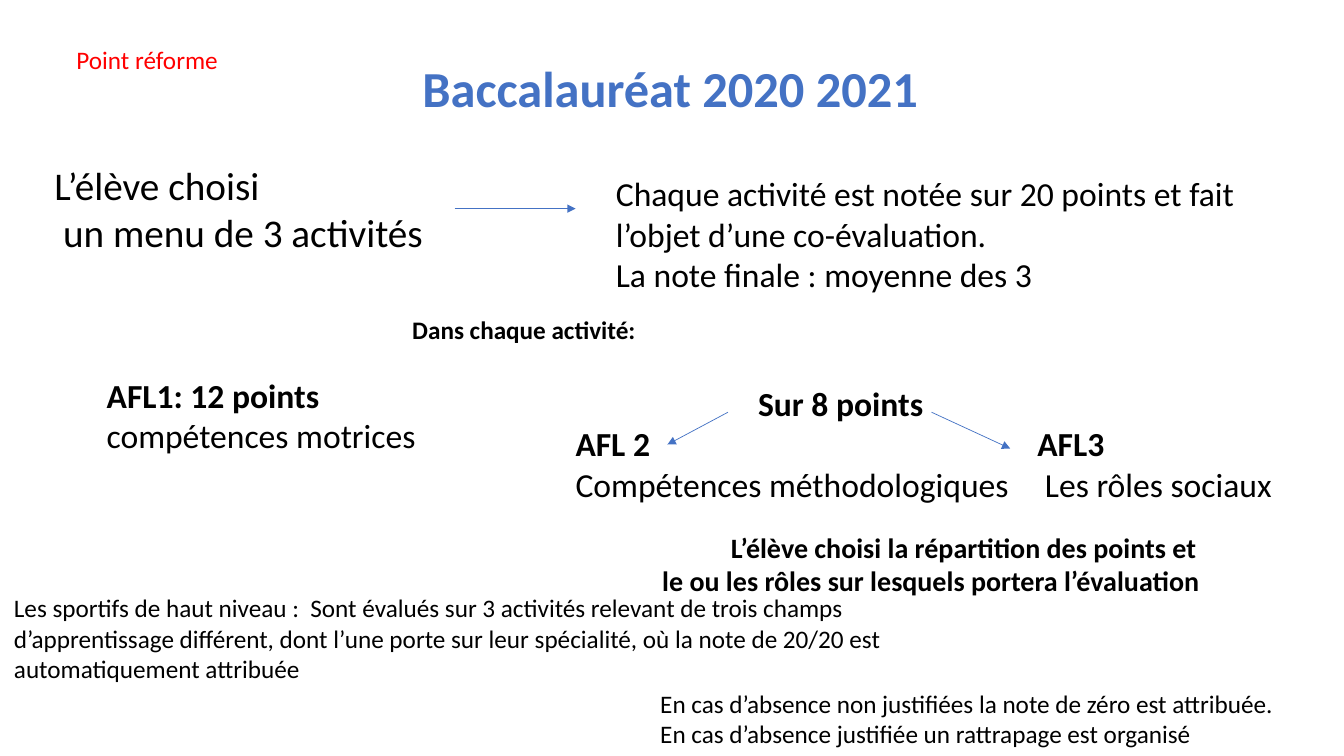
from pptx import Presentation
from pptx.dml.color import RGBColor
from pptx.enum.shapes import MSO_CONNECTOR
from pptx.enum.text import MSO_ANCHOR, MSO_AUTO_SIZE, PP_ALIGN
from pptx.oxml.ns import qn
from pptx.util import Inches, Pt
from lxml.etree import SubElement

BLUE = RGBColor(0x44, 0x72, 0xC4)
BLACK = RGBColor(0, 0, 0)
RED = RGBColor(0xFF, 0, 0)
FONT = "Calibri"

TITLE = ((4.09, 0.52, 5.15, 0.71), 36, BLUE, [("Baccalauréat 2020 2021", True)])
NOTES = [
    ((0.44, 1.55, 4.58, 1.04), 28, BLACK,
     [("L’élève choisi", False), (" un menu de 3 activités", False)]),
    ((6.01, 1.67, 6.46, 1.31), 24, BLACK,
     [("Chaque activité est notée sur 20 points et fait l’objet d’une co-évaluation.", False),
      ("La note finale : moyenne des 3", False)]),
    ((3.99, 3.07, 3.44, 0.4), 18, BLACK, [("Dans chaque activité:", True)]),
    ((0.96, 3.67, 3.56, 0.91), 24, BLACK,
     [("AFL1: 12 points", True), ("compétences motrices", False)]),
    ((7.42, 3.75, 1.9, 0.5), 24, BLACK, [("Sur 8 points", True)]),
    ((5.61, 4.15, 4.6, 0.91), 24, BLACK,
     [("AFL 2", True), ("Compétences méthodologiques", False)]),
    ((10.19, 4.15, 2.68, 0.91), 24, BLACK,
     [("AFL3", True), (" Les rôles sociaux", False)]),
    ((0.04, 5.83, 9.53, 1.01), 18, BLACK,
     [("Les sportifs de haut niveau :  Sont évalués sur 3 activités relevant de trois champs "
       "d’apprentissage différent, dont l’une porte sur leur spécialité, où la note de 20/20 "
       "est automatiquement attribuée", False)]),
    ((6.45, 6.78, 6.36, 0.71), 18, BLACK,
     [("En cas d’absence non justifiées la note de zéro est attribuée. "
       "En cas d’absence justifiée un rattrapage est organisé", False)]),
    ((0.66, 0.39, 2.14, 0.4), 18, RED, [("Point réforme", False)]),
]
CHOICE = ((6.47, 5.21, 5.56, 0.77), 20, BLACK,
          [("L’élève choisi la répartition des points et "
            "le ou les rôles sur lesquels portera l’évaluation", True)])
INDENT = 0.68
ARROWS = [
    (7.22, 4.09, 6.62, 4.41),
    (9.24, 4.09, 10.02, 4.45),
    (4.51, 2.07, 5.71, 2.07),
]


def fill_text(shape, size, color, lines):
    """Write the lines into a shape and format them."""
    frame = shape.text_frame
    frame.word_wrap = True
    frame.auto_size = MSO_AUTO_SIZE.NONE
    frame.vertical_anchor = MSO_ANCHOR.TOP
    frame.text = "\n".join(text for text, bold in lines)
    for para, (text, bold) in zip(frame.paragraphs, lines):
        para.alignment = PP_ALIGN.LEFT
        para.line_spacing = 1.0
        para.space_before = Pt(0)
        for run in para.runs:
            font = run.font
            font.name, font.size, font.bold = FONT, Pt(size), bold
            font.color.rgb = color


def add_note(slide, box, size, color, lines):
    """Add a text box and return it."""
    shape = slide.shapes.add_textbox(*map(Inches, box))
    fill_text(shape, size, color, lines)
    return shape


def add_arrow(slide, ends):
    """Add a thin blue arrow between two points."""
    line = slide.shapes.add_connector(MSO_CONNECTOR.STRAIGHT, *map(Inches, ends))
    line.line.color.rgb = BLUE
    line.line.width = Pt(0.5)
    SubElement(line.line._get_or_add_ln(), qn("a:tailEnd"), type="triangle")
    SubElement(line._element.spPr, qn("a:effectLst"))


def main():
    """Build the slide and save it."""
    deck = Presentation()
    deck.slide_width, deck.slide_height = Inches(13.33), Inches(7.5)
    slide = deck.slides.add_slide(deck.slide_layouts[5])
    box, *style = TITLE
    title = slide.shapes.title
    title.left, title.top, title.width, title.height = map(Inches, box)
    fill_text(title, *style)
    for note in NOTES:
        add_note(slide, *note)
    choice = add_note(slide, *CHOICE)
    first = choice.text_frame.paragraphs[0]
    first._p.get_or_add_pPr().set("indent", str(Inches(INDENT)))
    for ends in ARROWS:
        add_arrow(slide, ends)
    deck.save("out.pptx")


if __name__ == "__main__":
    main()
